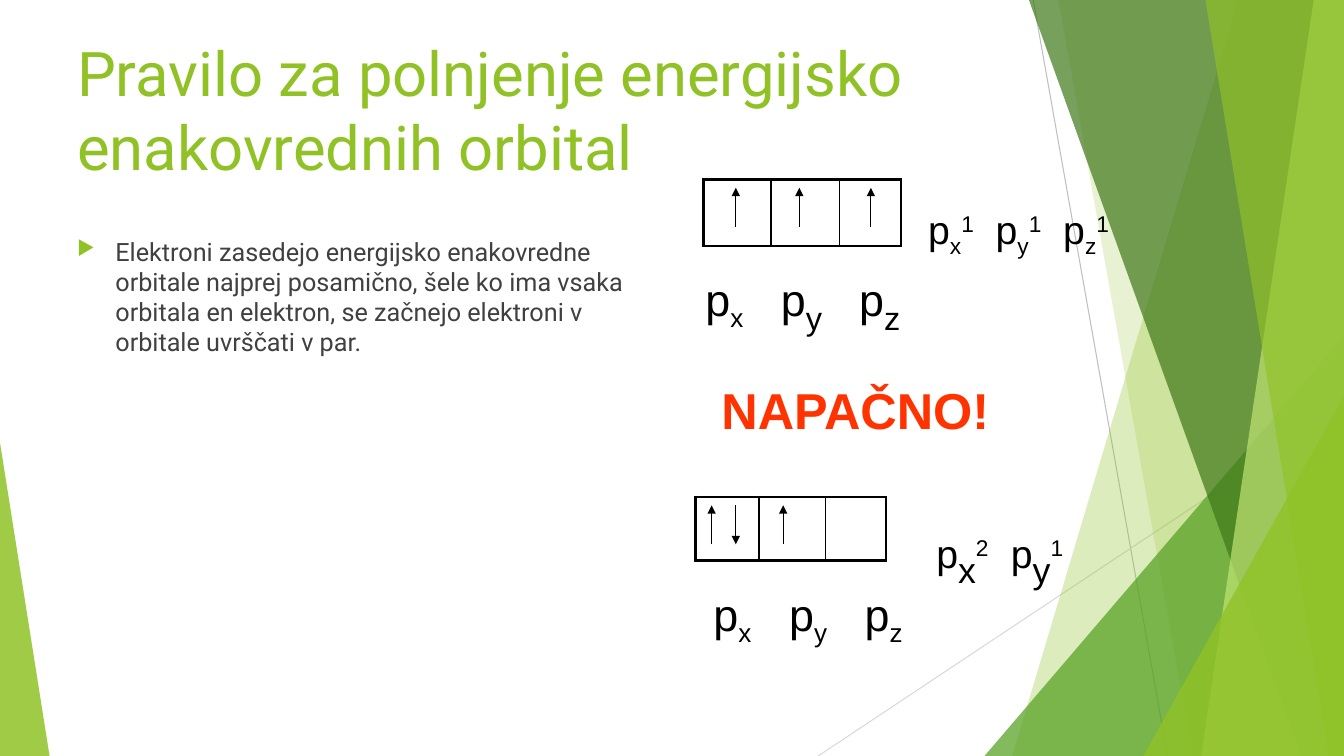
from lxml import etree
from pptx import Presentation
from pptx.dml.color import RGBColor
from pptx.enum.shapes import MSO_CONNECTOR, MSO_SHAPE
from pptx.oxml.ns import qn
from pptx.util import Inches, Pt

STRAIGHT = MSO_CONNECTOR.STRAIGHT
TRIANGLE = MSO_SHAPE.ISOSCELES_TRIANGLE
COLUMNS, ROWS = 160, 90
CELL = Inches(1 / 12)
COLORS = {
    "lime": "90C226", "green": "54A021", "forest": "3F7819", "pale": "C0E474",
    "gray": "BFBFBF", "silver": "D9D9D9", "text": "404040",
    "black": "000000", "red": "FF3300",
}


def grid(*counts):
    """Turn counts of grid cells into lengths."""
    return [round(count * CELL) for count in counts]


def add_element(parent, tag, **attributes):
    """Append a drawing element with its attributes."""
    return etree.SubElement(parent, qn(tag), attributes)


def paint(shape, color, opacity):
    """Give a shape a see-through fill without outline or shadow."""
    shape.shadow.inherit = False
    shape.line.fill.background()
    shape.fill.solid()
    shape.fill.fore_color.rgb = RGBColor.from_string(COLORS[color])
    fill = shape.element.spPr.find(qn("a:solidFill"))
    add_element(fill[0], "a:alpha", val=str(opacity * 1000))


def add_line(slide, start, end, color, arrow=False):
    """Draw a thin line, with an arrowhead at its end if wanted."""
    line = slide.shapes.add_connector(STRAIGHT, *grid(*start, *end))
    line.line.width = Pt(0.75)
    line.line.color.rgb = RGBColor.from_string(COLORS[color])
    properties = line.element.spPr
    if arrow:
        add_element(properties.find(qn("a:ln")), "a:tailEnd", type="triangle")
    add_element(properties, "a:effectLst")


def add_paragraph_box(slide, box):
    """Add a wrapping text box and return its first paragraph."""
    frame = slide.shapes.add_textbox(*grid(*box)).text_frame
    frame.word_wrap = True
    return frame.paragraphs[0]


def add_run(paragraph, text, size, color="black", font="Arial", bold=False, baseline=0):
    """Add one formatted run to a paragraph."""
    run = paragraph.add_run()
    run.text = text
    run.font.name = font
    run.font.size = Pt(size)
    run.font.bold = bold
    run.font.color.rgb = RGBColor.from_string(COLORS[color])
    if baseline:
        run.font._element.set("baseline", str(baseline * 1000))


def add_band(slide, top, bottom, color, opacity):
    """Draw a full-height band from a slanted left edge to the right margin."""
    points = [grid(*point) for point in
              ((top, 0), (COLUMNS, 0), (COLUMNS, ROWS), (bottom, ROWS))]
    builder = slide.shapes.build_freeform(*points[0])
    builder.add_line_segments(points[1:], close=True)
    paint(builder.convert_to_shape(), color, opacity)


def add_peak(slide, left, top, width, apex, color, opacity):
    """Draw a right triangle that stands on the bottom margin."""
    peak = slide.shapes.add_shape(TRIANGLE, *grid(left, top, width, ROWS - top))
    peak.adjustments[0] = apex
    paint(peak, color, opacity)


def add_backdrop(slide):
    """Draw the layered green facets at both sides."""
    add_line(slide, (123, 0), (139, ROWS), "gray")
    add_line(slide, (COLUMNS, 48.4), (97.4, ROWS), "silver")
    facets = [
        (add_band, 147.4, 120.5, "lime", 30),
        (add_band, 126, 142, "lime", 20),
        (add_peak, 117.2, 40, 42.8, 1, "green", 72),
        (add_band, 122.5, 154.9, "forest", 70),
        (add_band, 156.4, 143, "pale", 70),
        (add_band, 143.5, 158.2, "lime", 65),
        (add_peak, 136.1, 47.2, 23.9, 1, "lime", 80),
        (add_peak, 0, 52.7, 5.9, 0, "lime", 85),
    ]
    for draw, *facet in facets:
        draw(slide, *facet)


def add_rule(slide, box):
    """Write the bulleted rule."""
    paragraph = add_paragraph_box(slide, box)
    properties = paragraph._p.get_or_add_pPr()
    indent = Inches(0.38)
    properties.set("marL", str(indent))
    properties.set("indent", str(-indent))
    add_element(add_element(properties, "a:buClr"), "a:srgbClr", val=COLORS["lime"])
    add_element(properties, "a:buSzPct", val="80000")
    add_element(properties, "a:buChar", char="▶")
    add_run(paragraph,
            "Elektroni zasedejo energijsko enakovredne orbitale najprej posamično, "
            "šele ko ima vsaka orbitala en elektron, se začnejo elektroni v "
            "orbitale uvrščati v par.", 18, "text", "Roboto")


def add_terms(slide, box, size, tabs, terms):
    """Write orbital symbols at tab stops, each with subscript and superscript."""
    paragraph = add_paragraph_box(slide, box)
    stops = add_element(paragraph._p.get_or_add_pPr(), "a:tabLst")
    for tab in grid(*tabs):
        add_element(stops, "a:tab", pos=str(tab), algn="l")
    for index, (axis, axis_size, electrons) in enumerate(terms):
        add_run(paragraph, "\tp" if index else "p", size)
        add_run(paragraph, axis, axis_size, baseline=-25)
        if electrons:
            add_run(paragraph, electrons, size, baseline=30)


def add_cells(slide, box, widths):
    """Draw the row of orbital boxes as a table."""
    frame = slide.shapes.add_table(1, len(widths), *grid(*box))
    table = frame.table
    table.first_row = table.horz_banding = False
    table.rows[0].height = grid(box[3])[0]
    last = len(widths) - 1
    for index, width in enumerate(widths):
        table.columns[index].width = grid(width)[0]
        cell = table.cell(0, index)
        properties = cell._tc.get_or_add_tcPr()
        weights = {"L": 1 if index else 2.25, "R": 1 if index < last else 2.25,
                   "T": 2.25, "B": 2.25}
        for side, weight in weights.items():
            border = add_element(properties, f"a:ln{side}", w=str(Pt(weight)))
            fill = add_element(border, "a:solidFill")
            add_element(fill, "a:srgbClr", val=COLORS["black"])
        cell.fill.background()


def add_diagram(slide, box, widths, spins, labels, configuration):
    """Draw orbital boxes with spin arrows, labels below and configuration beside."""
    left, top, _, _ = box
    add_cells(slide, box, widths)
    for column, upward in spins:
        ends = [(left + column, top + 5.64), (left + column, top + 1)]
        add_line(slide, *(ends if upward else ends[::-1]), "black", arrow=True)
    for (column, row, width, height), *content in (labels, configuration):
        add_terms(slide, (left + column, top + row, width, height), *content)


def main():
    """Build and save the slide."""
    presentation = Presentation()
    presentation.slide_width, presentation.slide_height = grid(COLUMNS, ROWS)
    slide = presentation.slides.add_slide(presentation.slide_layouts[6])
    add_backdrop(slide)
    title = add_paragraph_box(slide, (8, 3.6, 144, 15))
    add_run(title, "Pravilo za polnjenje energijsko enakovrednih orbital",
            44, "lime", "Roboto")
    add_rule(slide, (8, 27.5, 70.7, 59.4))
    add_diagram(
        slide, (83.76, 21.36, 23.52, 7.92), (8.04, 8.16, 7.32),
        [(3.84, True), (11.4, True), (19.92, True)],
        ((-0.96, 9.1, 29.3, 7.6), 32, (9, 18.3),
         [("x", 32, ""), ("y", 40, ""), ("z", 40, "")]),
        ((25.56, 2.5, 27.4, 6.8), 28, (8.04, 16.08),
         [("x", 28, "1"), ("y", 28, "1"), ("z", 28, "1")]))
    warning = add_paragraph_box(slide, (84.7, 44.6, 38.8, 8.4))
    add_run(warning, "NAPAČNO!", 36, "red", bold=True)
    add_diagram(
        slide, (82.8, 59.16, 22.68, 7.56), (7.56, 7.92, 7.2),
        [(1.92, True), (4.8, False), (10.44, True)],
        ((0.96, 10.1, 30.2, 7.6), 32, (9, 18),
         [("x", 32, ""), ("y", 32, ""), ("z", 32, "")]),
        ((27.48, 0.6, 24.6, 7.1), 28, (8.88,),
         [("x", 44, "2"), ("y", 44, "1")]))
    presentation.save("out.pptx")


if __name__ == "__main__":
    main()
